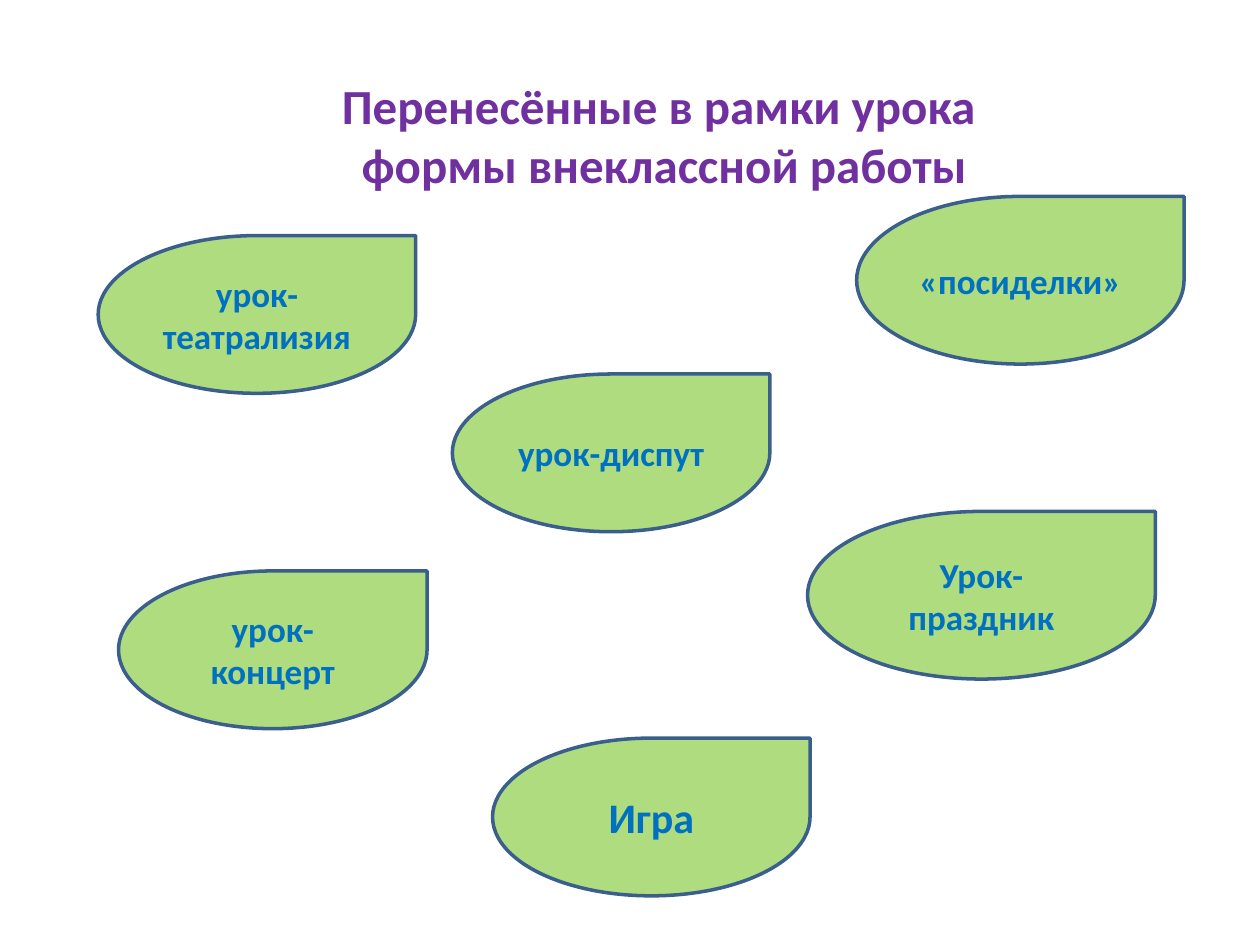
"""Build a slide of teardrops naming extracurricular forms brought into lessons."""
from dataclasses import dataclass

from lxml import etree
from pptx import Presentation
from pptx import util as u
from pptx.dml.color import RGBColor
from pptx.enum import shapes, text
from pptx.oxml.ns import qn


@dataclass(frozen=True)
class Theme:
    font: str = "Calibri"
    title_color: str = "7030A0"
    label_color: str = "0070C0"
    leaf_color: str = "92D050"
    outline_color: str = "3A5F8C"
    leaf_opacity: int = 73
    outline_width: int = 2
    title_size: int = 28
    label_size: int = 20
    large_label_size: int = 24


THEME = Theme()
TITLE = ["Перенесённые в рамки урока ", "формы внеклассной работы"]
TITLE_BOX = (2.77, 1.4, 21.23, 2.64)
SMALL, NARROW, WIDE, MEDIUM = (6.4, 3.18), (6.22, 3.18), (7.01, 3.38), (6.6, 3.38)
LESSON_FORMS = [
    ("урок-театрализия", (1.98, 4.75), SMALL, THEME.label_size),
    ("урок-диспут", (9.12, 7.54), SMALL, THEME.label_size),
    ("урок-концерт", (2.39, 11.51), NARROW, THEME.label_size),
    ("Урок-праздник", (16.28, 10.31), WIDE, THEME.label_size),
    ("«посиделки»", (17.27, 3.96), MEDIUM, THEME.label_size),
    ("Игра", (9.93, 14.88), SMALL, THEME.large_label_size),
]


def write_lines(shape, lines, size, color, anchor):
    frame = shape.text_frame
    frame.word_wrap = True
    frame.auto_size = text.MSO_AUTO_SIZE.NONE
    frame.vertical_anchor = anchor
    for index, line in enumerate(lines):
        paragraph = frame.add_paragraph() if index else frame.paragraphs[0]
        paragraph.alignment = text.PP_ALIGN.CENTER
        run = paragraph.add_run()
        run.text = line
        run.font.name = THEME.font
        run.font.size = u.Pt(size)
        run.font.bold = True
        run.font.color.rgb = RGBColor.from_string(color)


def add_title(slide):
    title = slide.shapes.title
    title.left, title.top, title.width, title.height = map(u.Cm, TITLE_BOX)
    write_lines(title, TITLE, THEME.title_size, THEME.title_color, text.MSO_ANCHOR.TOP)


def add_leaf(slide, label, position, extent, size):
    leaf = slide.shapes.add_shape(shapes.MSO_SHAPE.TEAR, *map(u.Cm, position + extent))
    leaf.shadow.inherit = False
    leaf.fill.solid()
    leaf.fill.fore_color.rgb = RGBColor.from_string(THEME.leaf_color)
    color = leaf.element.spPr.find(qn("a:solidFill")).find(qn("a:srgbClr"))
    etree.SubElement(color, qn("a:alpha"), val=str(THEME.leaf_opacity * 1000))
    leaf.line.color.rgb = RGBColor.from_string(THEME.outline_color)
    leaf.line.width = u.Pt(THEME.outline_width)
    write_lines(leaf, [label], size, THEME.label_color, text.MSO_ANCHOR.MIDDLE)


def main():
    presentation = Presentation()
    presentation.slide_width, presentation.slide_height = u.Cm(25.4), u.Cm(19.05)
    slide = presentation.slides.add_slide(presentation.slide_layouts.get_by_name("Title Only"))
    add_title(slide)
    for lesson_form in LESSON_FORMS:
        add_leaf(slide, *lesson_form)
    presentation.save("out.pptx")


if __name__ == "__main__":
    main()
